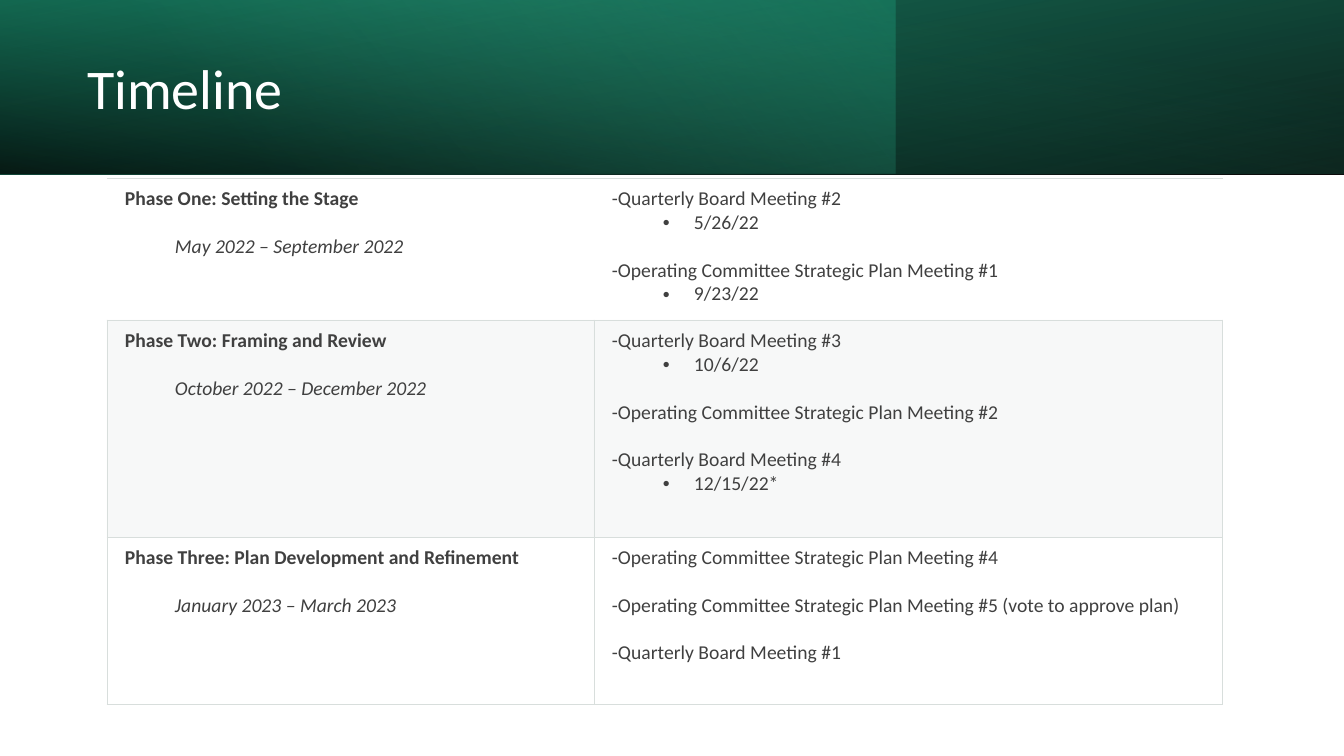
from dataclasses import dataclass

from lxml import etree
from pptx import Presentation
from pptx import util as u
from pptx.dml.color import RGBColor
from pptx.enum import shapes, text
from pptx.oxml import parse_xml
from pptx.oxml.ns import nsdecls, qn

PX = 914400 / 100.8
COLORS = {
    "black": "000000",
    "white": "FFFFFF",
    "pine": "16745A",
    "green": "1D9A78",
    "mint": "5AE0BB",
    "rule": "D8DEDC",
    "ink": "404040",
}
FONT = "Calibri"
BODY_PT = 14
BLANK_LINE_PT = 17
BANNER_HEIGHT = 174


@dataclass
class Stop:
    pos: int
    color: str
    alpha: int = 100


@dataclass
class Band:
    width: int
    angle: int
    stops: list[Stop]
    rotation: int = 0
    flip: bool = False


@dataclass
class Meeting:
    name: str
    date: str = ""


@dataclass
class Phase:
    name: str
    period: str
    height: int
    meetings: list[Meeting]
    sides: bool = True
    shaded: bool = False


BANDS = [
    Band(1344, 100, [Stop(0, "black", 96), Stop(100, "pine")], rotation=180, flip=True),
    Band(896, 140, [Stop(0, "green", 41), Stop(74, "mint", 0)]),
    Band(1344, 260, [Stop(0, "black", 63), Stop(78, "green", 15)], flip=True),
]

BOARD = "-Quarterly Board Meeting #"
COMMITTEE = "-Operating Committee Strategic Plan Meeting #"
PHASES = [
    Phase("Phase One: Setting the Stage", "May 2022 – September 2022", 142,
          [Meeting(BOARD + "2", "5/26/22"), Meeting(COMMITTEE + "1", "9/23/22")],
          sides=False),
    Phase("Phase Two: Framing and Review", "October 2022 – December 2022", 217,
          [Meeting(BOARD + "3", "10/6/22"), Meeting(COMMITTEE + "2"),
           Meeting(BOARD + "4", "12/15/22*")],
          shaded=True),
    Phase("Phase Three: Plan Development and Refinement", "January 2023 – March 2023", 167,
          [Meeting(COMMITTEE + "4"), Meeting(COMMITTEE + "5 (vote to approve plan)"),
           Meeting(BOARD + "1")]),
]
COLUMNS = [487, 629]


def px(n: float) -> int:
    return round(n * PX)


def write(tf, content: str, *, size: int = BODY_PT, color: str = "ink",
          bold: bool = False, italic: bool = False, before: int = 0,
          left: int = 0, hanging: int = 0, bullet: bool = False):
    p = tf.paragraphs[0]
    if p.runs:
        p = tf.add_paragraph()
    p.alignment = text.PP_ALIGN.LEFT
    p.space_before = u.Pt(before)
    r = p.add_run()
    r.text = content
    r.font.name = FONT
    r.font.size = u.Pt(size)
    r.font.bold = bold
    r.font.italic = italic
    r.font.color.rgb = RGBColor.from_string(COLORS[color])
    pPr = p._p.get_or_add_pPr()
    pPr.set("marL", str(px(left)))
    pPr.set("indent", str(px(-hanging)))
    if bullet:
        etree.SubElement(pPr, qn("a:buFont")).set("typeface", "Arial")
        etree.SubElement(pPr, qn("a:buChar")).set("char", "•")
    return p


def draw_band(s, band: Band) -> None:
    sp = s.shapes.add_shape(shapes.MSO_SHAPE.RECTANGLE, 0, 0, px(band.width), px(BANNER_HEIGHT))
    sp.shadow.inherit = False
    sp.line.fill.background()
    sp.rotation = band.rotation
    sp.fill.background()
    spPr = sp.element.spPr
    if band.flip:
        spPr.find(qn("a:xfrm")).set("flipH", "1")
    stops = "".join(
        f'<a:gs pos="{stop.pos * 1000}"><a:srgbClr val="{COLORS[stop.color]}">'
        f'<a:alpha val="{stop.alpha * 1000}"/></a:srgbClr></a:gs>'
        for stop in band.stops
    )
    gradient = parse_xml(
        f'<a:gradFill {nsdecls("a")} rotWithShape="1"><a:gsLst>{stops}</a:gsLst>'
        f'<a:lin ang="{band.angle * 60000}" scaled="0"/></a:gradFill>'
    )
    spPr.replace(spPr.find(qn("a:noFill")), gradient)


def draw_title(s) -> None:
    title = s.shapes.title
    title.element.getparent().append(title.element)
    title.left, title.top, title.width, title.height = map(px, (77, 27, 778, 128))
    tf = title.text_frame
    tf.word_wrap = True
    tf.vertical_anchor = text.MSO_ANCHOR.MIDDLE
    write(tf, "Timeline", size=40, color="white").line_spacing = 0.9


def format_cell(cell, sides: bool, shaded: bool) -> None:
    cell.margin_left, cell.margin_top, cell.margin_right, cell.margin_bottom = map(px, (18, 9, 15, 9))
    cell.vertical_anchor = text.MSO_ANCHOR.TOP
    tcPr = cell._tc.get_or_add_tcPr()
    for edge in ("lnL", "lnR", "lnT", "lnB"):
        ln = etree.SubElement(tcPr, qn(f"a:{edge}"), w=str(u.Pt(0.75)))
        if sides or edge in ("lnT", "lnB"):
            solid = etree.SubElement(ln, qn("a:solidFill"))
            etree.SubElement(solid, qn("a:srgbClr"), val=COLORS["rule"])
        else:
            etree.SubElement(ln, qn("a:noFill"))
    if shaded:
        cell.fill.solid()
        cell.fill.fore_color.rgb = RGBColor.from_string(COLORS["rule"])
        color = tcPr.find(qn("a:solidFill")).find(qn("a:srgbClr"))
        etree.SubElement(color, qn("a:alpha"), val="20000")
    else:
        cell.fill.background()


def draw_timeline(s) -> None:
    height = sum(phase.height for phase in PHASES)
    table = s.shapes.add_table(len(PHASES), len(COLUMNS), px(107), px(178),
                               px(sum(COLUMNS)), px(height)).table
    table.first_row = False
    table.horz_banding = False
    for column, width in zip(table.columns, COLUMNS):
        column.width = px(width)
    for row, phase in zip(table.rows, PHASES):
        row.height = px(phase.height)
        for cell in row.cells:
            format_cell(cell, phase.sides, phase.shaded)
        label, agenda = (cell.text_frame for cell in row.cells)
        write(label, phase.name, bold=True)
        write(label, phase.period, italic=True, before=BLANK_LINE_PT, left=50)
        for i, meeting in enumerate(phase.meetings):
            write(agenda, meeting.name, before=BLANK_LINE_PT if i else 0)
            if meeting.date:
                write(agenda, meeting.date, left=82, hanging=31, bullet=True)


def main() -> None:
    prs = Presentation()
    prs.slide_width, prs.slide_height = px(1344), px(756)
    s = prs.slides.add_slide(prs.slide_layouts[5])
    for band in BANDS:
        draw_band(s, band)
    draw_title(s)
    draw_timeline(s)
    prs.save("out.pptx")


if __name__ == "__main__":
    main()
